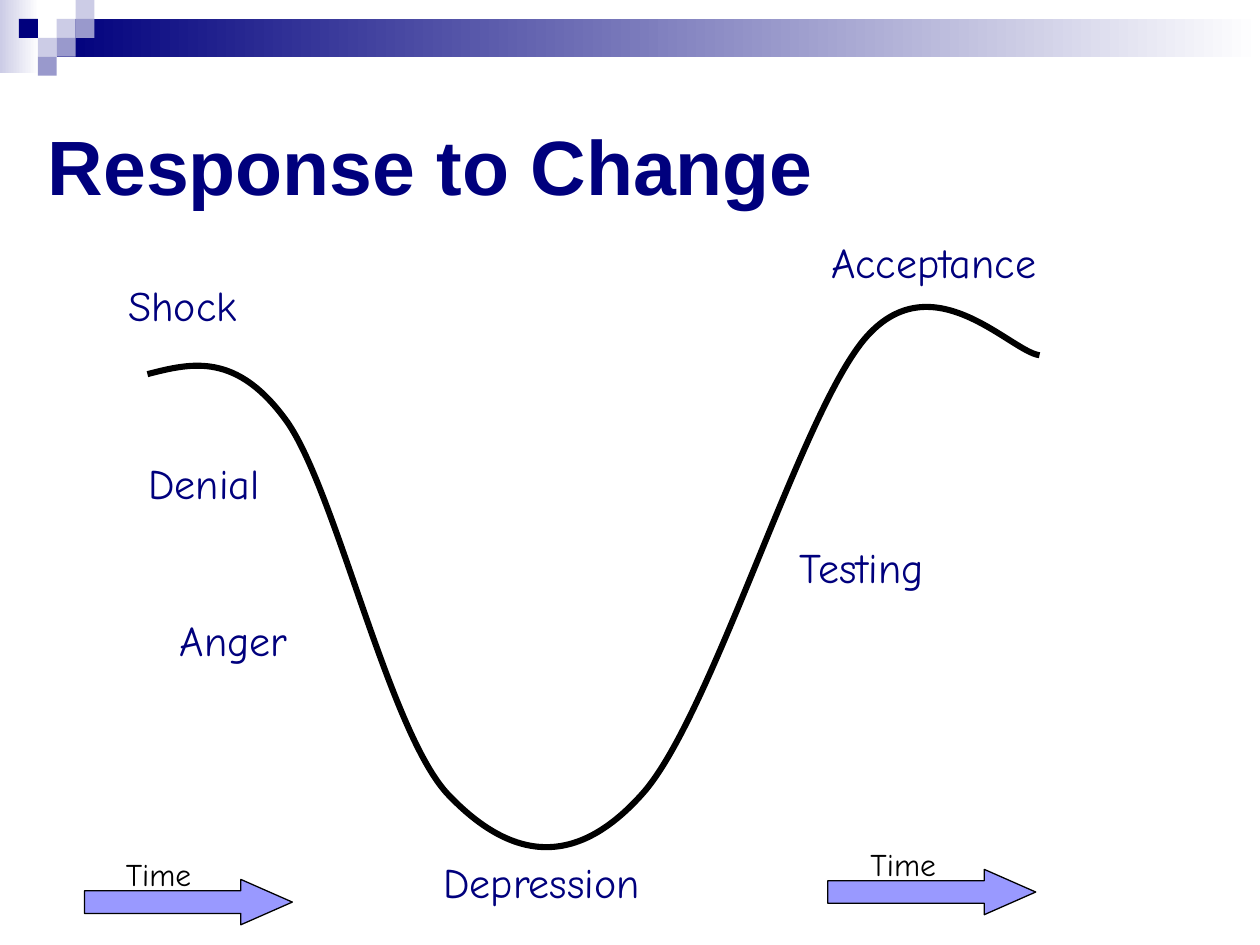
from typing import NamedTuple

from lxml import etree
from pptx import Presentation
from pptx.dml.color import RGBColor
from pptx.enum import shapes, text
from pptx.oxml.ns import qn
from pptx.util import Inches, Pt

COLORS = {
    "navy": "00007D",
    "lavender": "CCCCE6",
    "violet": "9999CC",
    "arrow": "9999FF",
    "black": "000000",
    "white": "FFFFFF",
}
GRID = 0.15


class Label(NamedTuple):
    text: str
    left: float
    top: float
    width: float
    height: float = 0.5
    size: int = 24
    color: str = "navy"
    font: str = "Comic Neue"
    bold: bool = False


class Square(NamedTuple):
    column: int
    row: int
    color: str


class Point(NamedTuple):
    x: float
    y: float


TITLE = Label("Response to Change", 0.28, 0.68, 8.67, 1.25, 44, font="Arial", bold=True)
LABELS = [
    Label("Shock", 0.92, 2.17, 1.17),
    Label("Anger", 1.33, 4.83, 2.5),
    Label("Denial", 1.08, 3.58, 2.5),
    Label("Acceptance", 6.5, 1.83, 2.5),
    Label("Testing", 6.25, 4.25, 2.5),
    Label("Depression", 3.42, 6.75, 2.5),
]
SQUARES = [
    Square(3, 1, "lavender"),
    Square(4, 0, "lavender"),
    Square(4, 1, "violet"),
    Square(2, 2, "lavender"),
    Square(1, 1, "navy"),
    Square(3, 2, "violet"),
    Square(2, 3, "violet"),
]
TIME_ARROWS = [Point(0.67, 6.98), Point(6.57, 6.9)]
TIME_LABELS = [
    Label("Time", 0.9, 6.74, 0.77, 0.4, 18, "black"),
    Label("Time", 6.81, 6.66, 0.85, 0.4, 18, "black"),
]
CURVE_START = Point(1.17, 2.97)
CURVE_SEGMENTS = [
    (Point(1.52, 2.88), Point(1.88, 2.79), Point(2.28, 3.35)),
    (Point(2.67, 3.91), Point(3.09, 5.82), Point(3.56, 6.31)),
    (Point(4.03, 6.8), Point(4.54, 6.92), Point(5.09, 6.31)),
    (Point(5.65, 5.7), Point(6.36, 3.25), Point(6.88, 2.67)),
    (Point(7.41, 2.08), Point(8.02, 2.79), Point(8.25, 2.82)),
]


def rgb(name: str) -> RGBColor:
    return RGBColor.from_string(COLORS[name])


def add_shape(slide, kind, left: float, top: float, width: float, height: float):
    shape = slide.shapes.add_shape(
        kind, Inches(left), Inches(top), Inches(width), Inches(height)
    )
    shape.shadow.inherit = False
    shape.line.fill.background()
    return shape


def add_fading_bar(slide, left: float, top: float, width: float, height: float, color: str) -> None:
    """Draw a bar that fades from the given colour to white, left to right."""
    bar = add_shape(slide, shapes.MSO_SHAPE.RECTANGLE, left, top, width, height)
    bar.fill.gradient()
    bar.fill.gradient_angle = 0
    for stop, name, position in zip(bar.fill.gradient_stops, (color, "white"), (0, 1)):
        stop.color.rgb = rgb(name)
        stop.position = position


def add_square(slide, square: Square) -> None:
    shape = add_shape(
        slide, shapes.MSO_SHAPE.RECTANGLE, square.column * GRID, square.row * GRID, GRID, GRID
    )
    shape.fill.solid()
    shape.fill.fore_color.rgb = rgb(square.color)


def add_label(slide, label: Label, anchor=text.MSO_ANCHOR.TOP) -> None:
    box = slide.shapes.add_textbox(
        Inches(label.left), Inches(label.top), Inches(label.width), Inches(label.height)
    )
    frame = box.text_frame
    frame.word_wrap = True
    frame.vertical_anchor = anchor
    frame.text = label.text
    font = frame.paragraphs[0].runs[0].font
    font.name = label.font
    font.size = Pt(label.size)
    font.bold = label.bold
    font.color.rgb = rgb(label.color)


def add_response_curve(slide) -> None:
    """Lay out the control points, then turn each three lines into one cubic curve."""
    controls = [point for segment in CURVE_SEGMENTS for point in segment]
    builder = slide.shapes.build_freeform(
        Inches(CURVE_START.x), Inches(CURVE_START.y), scale=1.0
    )
    builder.add_line_segments([(Inches(p.x), Inches(p.y)) for p in controls], close=False)
    curve = builder.convert_to_shape()

    outline = next(curve.element.iter(qn("a:path")))
    lines = outline.findall(qn("a:lnTo"))
    for first in range(0, len(lines), 3):
        cubic = etree.SubElement(outline, qn("a:cubicBezTo"))
        for line in lines[first:first + 3]:
            cubic.append(line[0])
            outline.remove(line)

    curve.shadow.inherit = False
    curve.fill.background()
    curve.line.color.rgb = rgb("black")
    curve.line.width = Pt(3.5)


def add_time_arrow(slide, corner: Point) -> None:
    arrow = add_shape(slide, shapes.MSO_SHAPE.RIGHT_ARROW, corner.x, corner.y, 1.65, 0.36)
    arrow.adjustments[0] = 0.5
    arrow.adjustments[1] = 1.135
    arrow.fill.solid()
    arrow.fill.fore_color.rgb = rgb("arrow")
    arrow.line.color.rgb = rgb("black")
    arrow.line.width = Pt(0.75)


def main() -> None:
    presentation = Presentation()
    presentation.slide_width = Inches(10)
    presentation.slide_height = Inches(7.5)
    slide = presentation.slides.add_slide(presentation.slide_layouts[6])

    add_fading_bar(slide, 0, 0, 0.31, 0.58, "lavender")
    add_fading_bar(slide, 0.45, 0.15, 9.55, 0.3, "navy")
    for square in SQUARES:
        add_square(slide, square)
    add_label(slide, TITLE, text.MSO_ANCHOR.MIDDLE)
    add_response_curve(slide)
    for label in LABELS:
        add_label(slide, label)
    for corner in TIME_ARROWS:
        add_time_arrow(slide, corner)
    for label in TIME_LABELS:
        add_label(slide, label)

    presentation.save("out.pptx")


if __name__ == "__main__":
    main()
